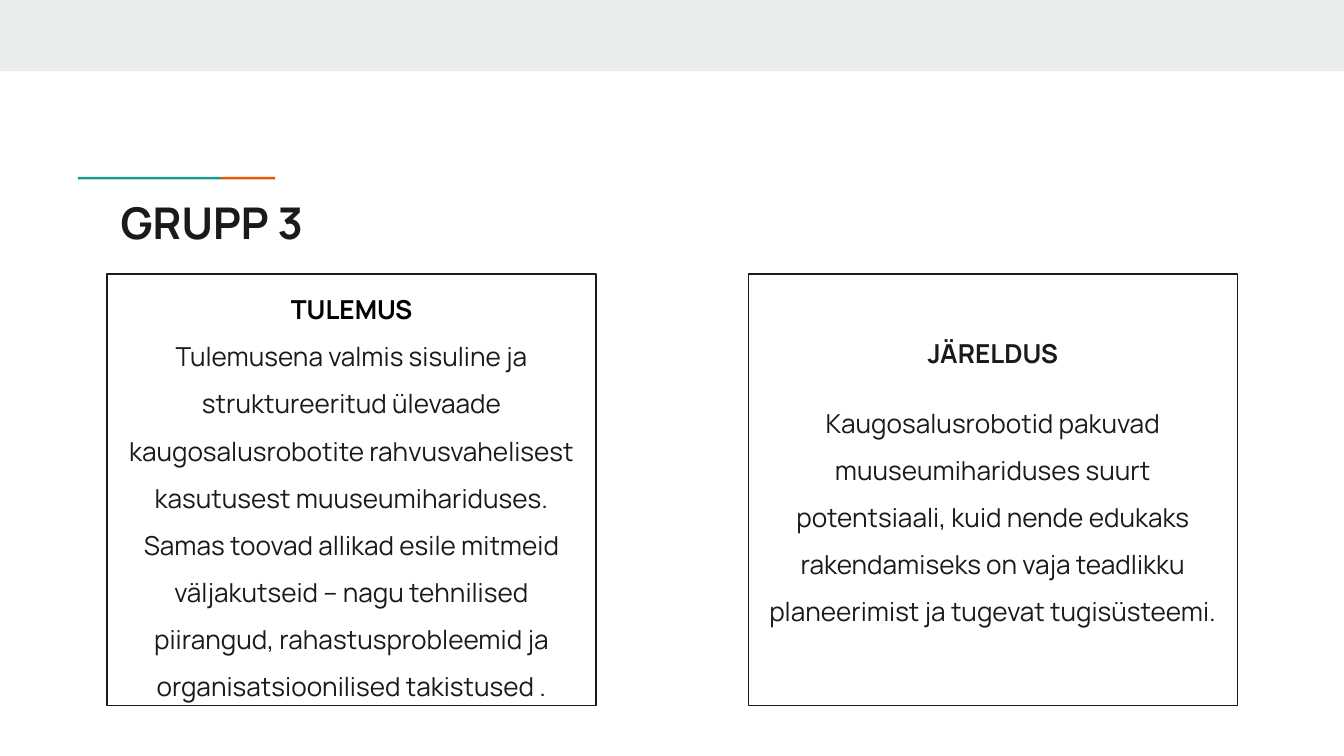
import pptx
import pptx.util
import pptx.dml.color
import pptx.enum.shapes
import pptx.enum.text

Pt = pptx.util.Pt
RGB = pptx.dml.color.RGBColor
ALIGN = pptx.enum.text.PP_ALIGN
ANCHOR = pptx.enum.text.MSO_ANCHOR
RECT = pptx.enum.shapes.MSO_SHAPE.RECTANGLE

COLORS = {
    "band": "E9EDEE",
    "teal": "1A9988",
    "orange": "EB5600",
    "ink": "1A1A1A",
    "black": "000000",
    "white": "FFFFFF",
}


def paint(item, name):
    item.solid()
    item.fore_color.rgb = RGB.from_string(COLORS[name])


def style(item, values):
    for key, value in values.items():
        setattr(item, key, value)


def add_rect(slide, spot, fill, line=None):
    shape = slide.shapes.add_shape(RECT, *map(Pt, spot))
    shape.shadow.inherit = False
    paint(shape.fill, fill)
    if line:
        paint(shape.line.fill, line)
        shape.line.width = Pt(0.75)
    else:
        shape.line.fill.background()
    return shape


def set_frame(frame, anchor, bottom=7.2):
    style(frame, {
        "word_wrap": True,
        "vertical_anchor": anchor,
        "margin_left": Pt(7.2),
        "margin_right": Pt(7.2),
        "margin_top": Pt(7.2),
        "margin_bottom": Pt(bottom),
    })


def write(para, text, size, color, bold, layout):
    style(para, layout)
    run = para.add_run()
    run.text = text
    style(run.font, {"name": "Manrope", "size": Pt(size), "bold": bold})
    run.font.color.rgb = RGB.from_string(COLORS[color])


def add_title(slide, text):
    frame = slide.shapes.add_textbox(
        Pt(57.6), Pt(97.9), Pt(605.5), Pt(42.5)).text_frame
    set_frame(frame, ANCHOR.TOP)
    write(frame.paragraphs[0], text, 23.4, "ink", True, {})


def add_card(slide, left, head, body, color, gap, bottom):
    box = add_rect(slide, (left, 146.7, 262, 231.4), "white", "ink")
    frame = box.text_frame
    set_frame(frame, ANCHOR.MIDDLE, bottom)
    layout = {"alignment": ALIGN.CENTER, "line_spacing": 1.5}
    write(frame.paragraphs[0], head, 14, color, True, layout)
    layout["space_before"] = Pt(gap)
    write(frame.add_paragraph(), body, 14, "ink", False, layout)


def main():
    deck = pptx.Presentation()
    style(deck, {"slide_width": Pt(720), "slide_height": Pt(405)})
    slide = deck.slides.add_slide(deck.slide_layouts[6])

    add_rect(slide, (0, 0, 720, 38.2), "band")
    add_rect(slide, (41.8, 94.8, 76.6, 1.4), "teal")
    add_rect(slide, (118.4, 94.8, 29, 1.4), "orange")
    add_title(slide, "GRUPP 3")

    cards = [
        (57.4, "TULEMUS",
         "Tulemusena valmis sisuline ja struktureeritud ülevaade "
         "kaugosalusrobotite rahvusvahelisest kasutusest "
         "muuseumihariduses. Samas toovad allikad esile mitmeid "
         "väljakutseid – nagu tehnilised piirangud, rahastusprobleemid "
         "ja organisatsioonilised takistused .",
         "black", 0, 7.2),
        (400.9, "JÄRELDUS",
         "Kaugosalusrobotid pakuvad muuseumihariduses suurt "
         "potentsiaali, kuid nende edukaks rakendamiseks on vaja "
         "teadlikku planeerimist ja tugevat tugisüsteemi.",
         "ink", 12, 24),
    ]
    for card in cards:
        add_card(slide, *card)

    deck.save("out.pptx")


if __name__ == "__main__":
    main()
